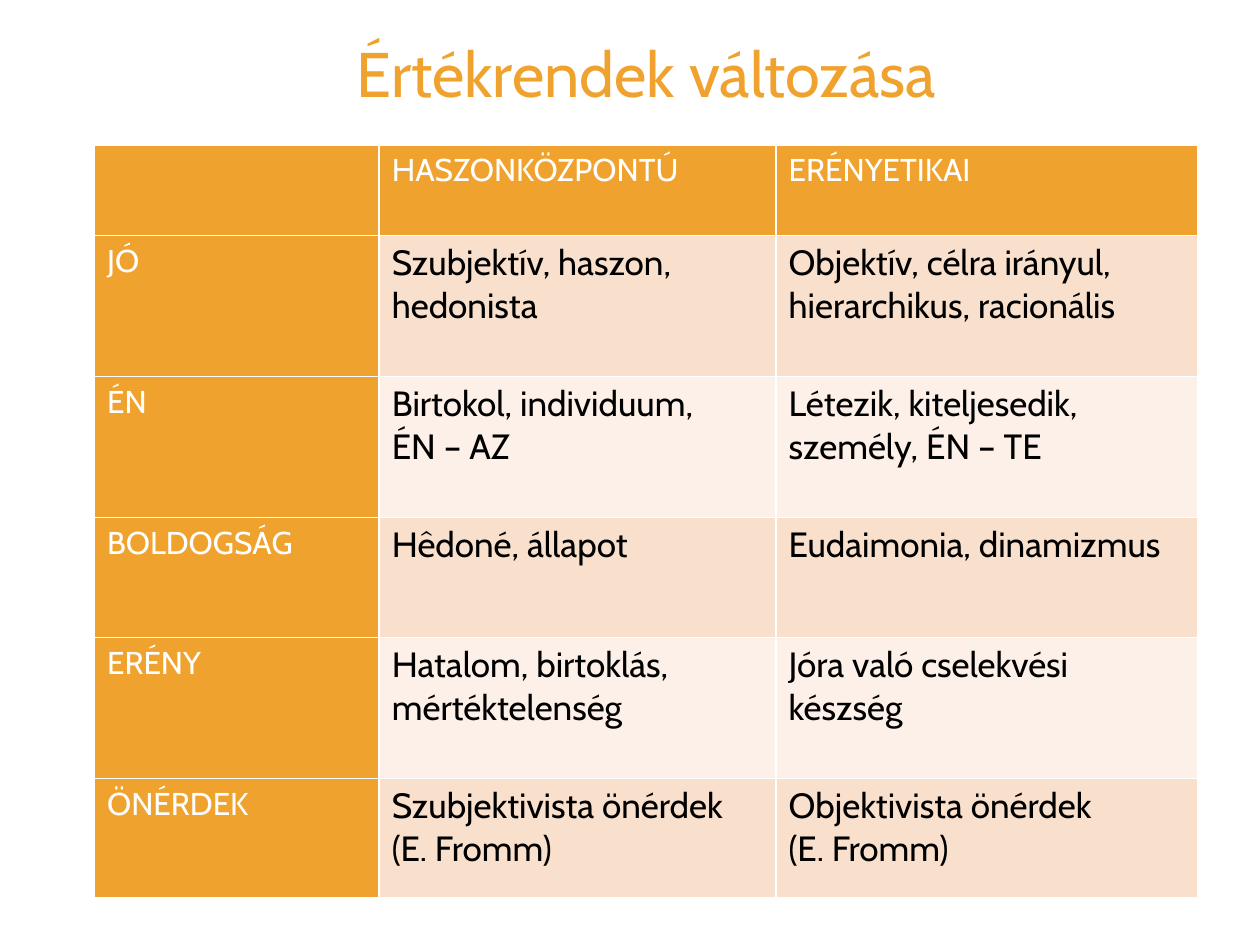
from dataclasses import dataclass

from lxml.etree import SubElement
from pptx import Presentation
from pptx.dml.color import RGBColor
from pptx.enum.text import MSO_ANCHOR as Anchor, PP_ALIGN as Align
from pptx.oxml.ns import qn
from pptx.util import Inches, Pt

ORANGE = RGBColor(0xF0, 0xA2, 0x2E)
PEACH = RGBColor(0xF9, 0xE0, 0xCD)
CREAM = RGBColor(0xFC, 0xF0, 0xE8)
WHITE = RGBColor(0xFF, 0xFF, 0xFF)
BLACK = RGBColor(0x00, 0x00, 0x00)

LEFT, WIDTH = 0.75, 8.76
COLS = (2.26, 3.15, 3.35)


@dataclass
class Row:
    height: float
    texts: tuple[str, str, str]


@dataclass
class Look:
    size: int
    color: RGBColor
    fill: RGBColor


ROWS = [
    Row(0.72, ("", "HASZONKÖZPONTÚ", "ERÉNYETIKAI")),
    Row(1.12, ("JÓ", "Szubjektív, haszon, hedonista",
               "Objektív, célra irányul,\nhierarchikus, racionális")),
    Row(1.12, ("ÉN", "Birtokol, individuum, \vÉN – AZ",
               "Létezik, kiteljesedik, személy, ÉN – TE")),
    Row(0.95, ("BOLDOGSÁG", "Hêdoné, állapot", "Eudaimonia, dinamizmus")),
    Row(1.12, ("ERÉNY", "Hatalom, birtoklás, mértéktelenség",
               "Jóra való cselekvési készség")),
    Row(0.95, ("ÖNÉRDEK", "Szubjektivista önérdek (E. Fromm)",
               "Objektivista önérdek\v(E. Fromm)")),
]
HEAD = Look(18, WHITE, ORANGE)
BANDS = (Look(20, BLACK, CREAM), Look(20, BLACK, PEACH))


def style(frame, size: int, color: RGBColor) -> None:
    values = {"name": "Cabin", "size": Pt(size), "bold": False}
    for para in frame.paragraphs:
        for key, value in values.items():
            setattr(para.font, key, value)
        para.font.color.rgb = color
        for run in para.runs:
            for key, value in values.items():
                setattr(run.font, key, value)
            run.font.color.rgb = color


def edge(cell, color: RGBColor, width: float) -> None:
    """Draw all four cell borders; call before the cell is filled."""
    props = cell._tc.get_or_add_tcPr()
    for side in ("a:lnL", "a:lnR", "a:lnT", "a:lnB"):
        line = SubElement(props, qn(side), w=str(Pt(width)))
        fill = SubElement(line, qn("a:solidFill"))
        SubElement(fill, qn("a:srgbClr"), val=str(color))


def add_title(slide, text: str) -> None:
    title = slide.shapes.title
    box = {"left": LEFT, "top": 0.22, "width": WIDTH, "height": 1.44}
    for key, value in box.items():
        setattr(title, key, Inches(value))
    frame = title.text_frame
    frame.text = text
    frame.vertical_anchor = Anchor.TOP
    frame.paragraphs[0].alignment = Align.CENTER
    style(frame, 36, ORANGE)


def add_grid(slide, rows: list[Row]) -> None:
    height = sum(row.height for row in rows)
    table = slide.shapes.add_table(
        len(rows), len(COLS), Inches(LEFT), Inches(1.15),
        Inches(WIDTH), Inches(height)).table
    table.first_row = table.horz_banding = False
    for col, width in zip(table.columns, COLS):
        col.width = Inches(width)
    for r, row in enumerate(rows):
        table.rows[r].height = Inches(row.height)
        for c, text in enumerate(row.texts):
            look = HEAD if r == 0 or c == 0 else BANDS[r % 2]
            cell = table.cell(r, c)
            cell.text_frame.text = text
            style(cell.text_frame, look.size, look.color)
            edge(cell, WHITE, 1)
            cell.fill.solid()
            cell.fill.fore_color.rgb = look.fill


def main() -> None:
    deck = Presentation()
    deck.slide_width, deck.slide_height = Inches(10), Inches(7.5)
    slide = deck.slides.add_slide(deck.slide_layouts[5])
    add_title(slide, "Értékrendek változása")
    add_grid(slide, ROWS)
    deck.save("out.pptx")


if __name__ == "__main__":
    main()
